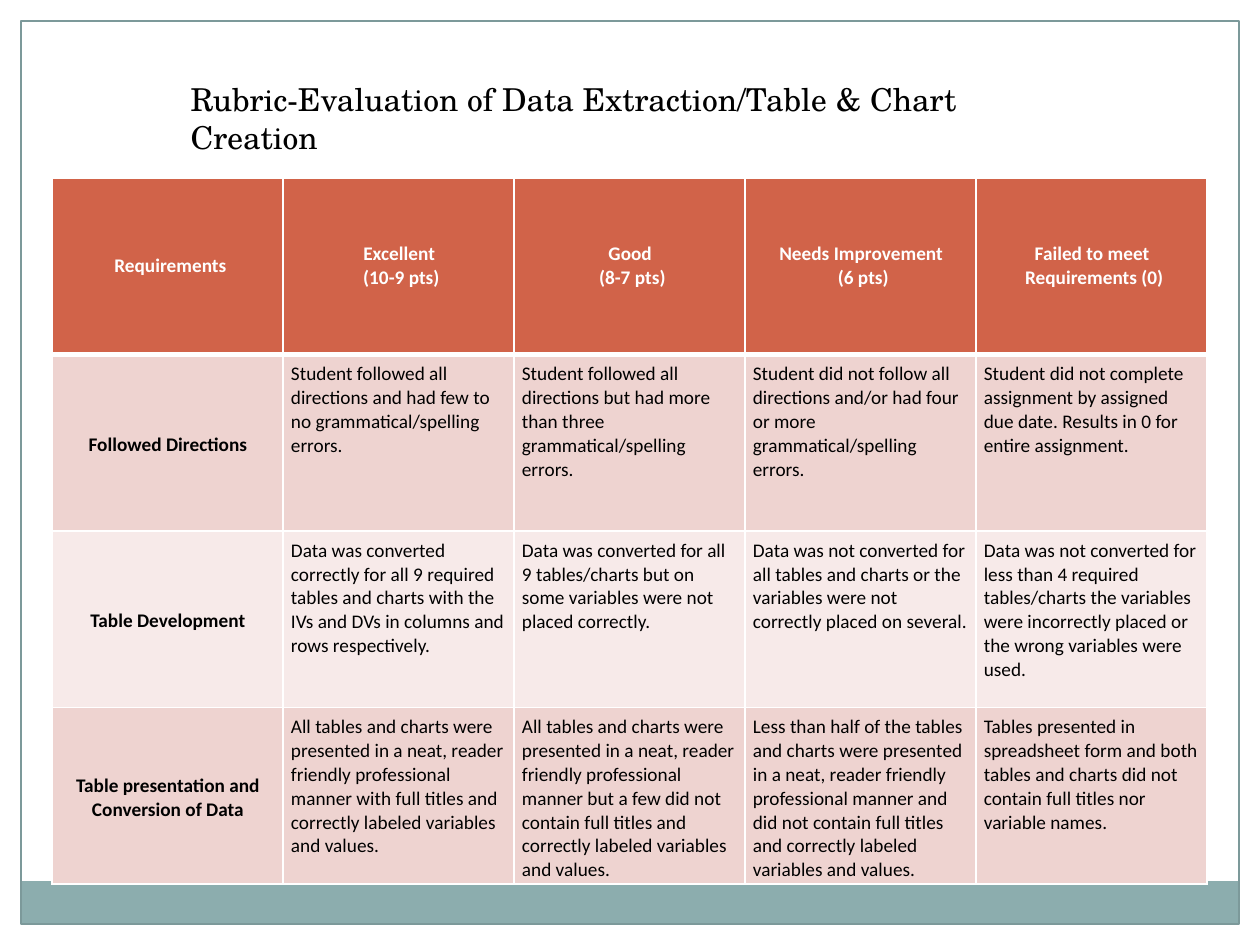
from lxml import etree
from pptx import Presentation
from pptx.dml.color import RGBColor
from pptx.enum.shapes import MSO_SHAPE
from pptx.enum.text import MSO_ANCHOR, MSO_AUTO_SIZE, PP_ALIGN
from pptx.oxml.ns import qn
from pptx.util import Emu, Pt

RECTANGLE = MSO_SHAPE.RECTANGLE
TOP, MIDDLE = MSO_ANCHOR.TOP, MSO_ANCHOR.MIDDLE
LEFT, CENTER = PP_ALIGN.LEFT, PP_ALIGN.CENTER
GROW = MSO_AUTO_SIZE.SHAPE_TO_FIT_TEXT

EMU_PER_PX = 914400 / 126
SLIDE_WIDTH, SLIDE_HEIGHT = 1260, 945
WHITE, BLACK = "FFFFFF", "000000"
TEAL, FRAME_TEAL = "8CADAE", "7C999A"
HEADER_FILL, BAND_FILLS = "D16349", ("EED3D0", "F7EAE9")
TITLE_FONT, TABLE_FONT = "TeX Gyre Schola", "Calibri"

TITLE = "Rubric-Evaluation of Data Extraction/Table & Chart Creation"
RUBRIC = [
    ["Requirements", "Excellent \n(10-9 pts)", "Good \n(8-7 pts)",
     "Needs Improvement \n(6 pts)", "Failed to meet \nRequirements (0)"],
    ["Followed Directions",
     "Student followed all directions and had few to no grammatical/spelling errors.",
     "Student followed all directions but had more than three grammatical/spelling errors.",
     "Student did not follow all directions and/or had four or more grammatical/spelling errors.",
     "Student did not complete assignment by assigned due date. Results in 0 for entire assignment."],
    ["Table Development",
     "Data was converted correctly for all 9 required tables and charts with the IVs and DVs "
     "in columns and rows respectively.",
     "Data was converted for all 9 tables/charts but on some variables were not placed correctly.",
     "Data was not converted for all tables and charts or the variables were not correctly "
     "placed on several.",
     "Data was not converted for less than 4 required tables/charts the variables were "
     "incorrectly placed or the wrong variables were used."],
    ["Table presentation and Conversion of Data",
     "All tables and charts were presented in a neat, reader friendly professional manner "
     "with full titles and correctly labeled variables and values.",
     "All tables and charts were presented in a neat, reader friendly professional manner "
     "but a few did not contain full titles and correctly labeled variables and values.",
     "Less than half of the tables and charts were presented in a neat, reader friendly "
     "professional manner and did not contain full titles and correctly labeled variables "
     "and values.",
     "Tables presented in spreadsheet form and both tables and charts did not contain full "
     "titles nor variable names."],
]


def px(length):
    return Emu(round(length * EMU_PER_PX))


def rgb(hex_color):
    return RGBColor.from_string(hex_color)


def format_text(text_frame, font_name, size, color, bold, align):
    for paragraph in text_frame.paragraphs:
        paragraph.alignment = align
        for run in paragraph.runs:
            font = run.font
            font.name, font.size, font.bold = font_name, Pt(size), bold
            font.color.rgb = rgb(color)


def add_panel(slide, left, top, width, height, fill=None, line=None):
    panel = slide.shapes.add_shape(RECTANGLE, *map(px, (left, top, width, height)))
    panel.shadow.inherit = False
    if fill:
        panel.fill.solid()
        panel.fill.fore_color.rgb = rgb(fill)
    else:
        panel.fill.background()
    if line:
        panel.line.color.rgb = rgb(line)
        panel.line.width = Pt(0.75)
    else:
        panel.line.fill.background()


def add_frame(slide, left, top, width, height, margin, band_height):
    # White margins: top, right, left
    add_panel(slide, left, top, width, margin, fill=WHITE)
    add_panel(slide, left + width - margin, top, margin, height, fill=WHITE)
    add_panel(slide, left, top, margin, height, fill=WHITE)

    # Teal band and thin outline inside the margins
    inner_left, inner_top = left + margin, top + margin
    inner_width, inner_height = width - 2 * margin, height - 2 * margin
    add_panel(slide, inner_left, inner_top + inner_height - band_height,
              inner_width, band_height, fill=TEAL)
    add_panel(slide, inner_left, inner_top, inner_width, inner_height, line=FRAME_TEAL)


def set_borders(cell, color, bottom_width):
    properties = cell._tc.get_or_add_tcPr()
    widths = {"a:lnL": 1, "a:lnR": 1, "a:lnT": 1, "a:lnB": bottom_width}
    for position, (tag, width) in enumerate(widths.items()):
        border = etree.Element(qn(tag), w=str(Pt(width)))
        fill = etree.SubElement(border, qn("a:solidFill"))
        etree.SubElement(fill, qn("a:srgbClr"), val=color)
        properties.insert(position, border)


def fill_cell(cell, text, row, column):
    is_header = row == 0
    is_label = is_header or column == 0
    cell.text_frame.text = text
    format_text(cell.text_frame, TABLE_FONT, 11, WHITE if is_header else BLACK,
                is_label, CENTER if is_label else LEFT)
    cell.vertical_anchor = MIDDLE if is_label else TOP
    insets = (6, 0, 0, 0) if is_header else (8, 8, 7, 4)
    (cell.margin_left, cell.margin_top,
     cell.margin_right, cell.margin_bottom) = map(px, insets)
    cell.fill.solid()
    cell.fill.fore_color.rgb = rgb(HEADER_FILL if is_header else BAND_FILLS[(row - 1) % 2])
    set_borders(cell, WHITE, 3 if is_header else 1)


def add_rubric(slide, left, top, width, height):
    row_count, column_count = len(RUBRIC), len(RUBRIC[0])
    table = slide.shapes.add_table(row_count, column_count, px(left), px(top),
                                   px(width), px(height)).table
    for column in table.columns:
        column.width = px(width / column_count)
    for table_row in table.rows:
        table_row.height = px(height / row_count)
    for row, texts in enumerate(RUBRIC):
        for column, text in enumerate(texts):
            fill_cell(table.cell(row, column), text, row, column)


def set_title(slide, left, top, width, height):
    title = slide.shapes.title
    title.left, title.top, title.width, title.height = map(px, (left, top, width, height))
    text_frame = title.text_frame
    text_frame.text = TITLE
    text_frame.word_wrap = True
    text_frame.auto_size = GROW
    text_frame.vertical_anchor = TOP
    format_text(text_frame, TITLE_FONT, 18, BLACK, False, LEFT)


def main():
    presentation = Presentation()
    presentation.slide_width, presentation.slide_height = px(SLIDE_WIDTH), px(SLIDE_HEIGHT)
    title_only = presentation.slide_layouts[5]
    slide = presentation.slides.add_slide(title_only)
    add_frame(slide, 0, 0, SLIDE_WIDTH, SLIDE_HEIGHT, margin=21, band_height=43)
    add_rubric(slide, 52, 178, 1155, 706)
    set_title(slide, 178, 74, 903, 50)
    presentation.save("out.pptx")


if __name__ == "__main__":
    main()
